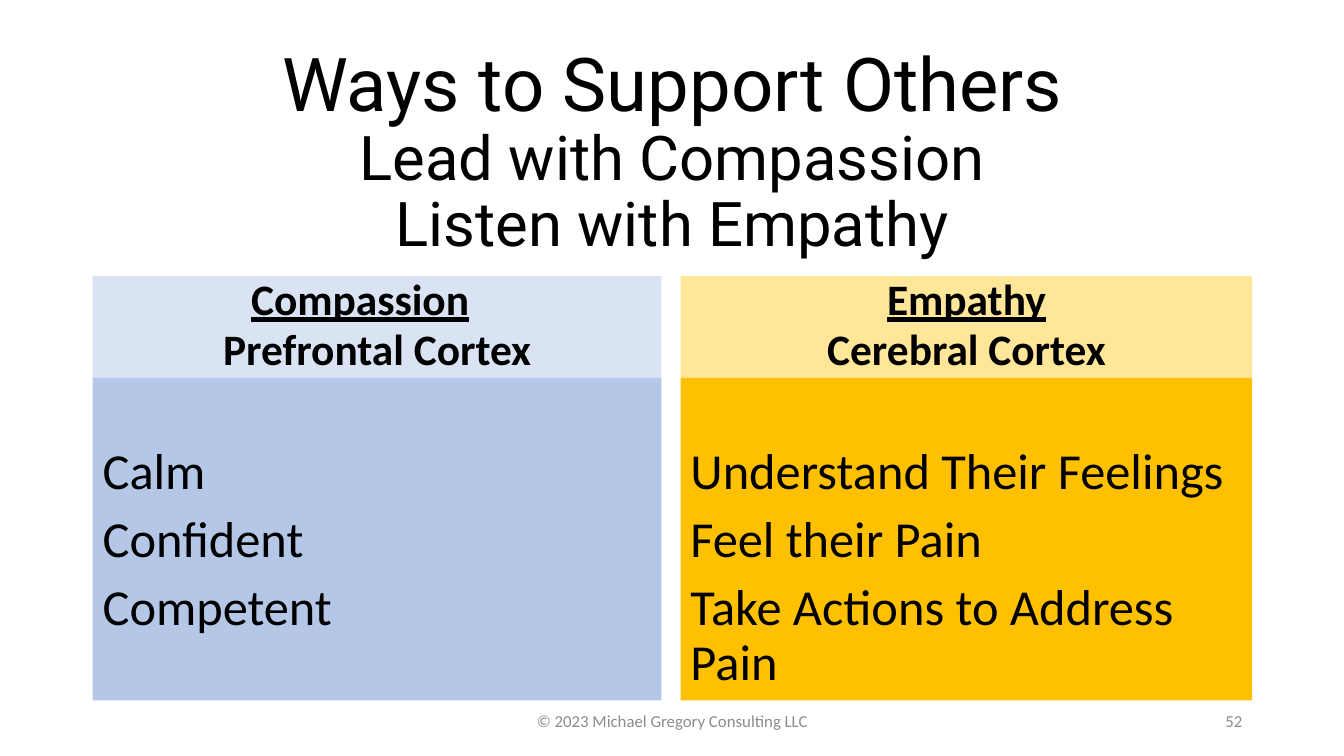
from dataclasses import dataclass

from pptx import Presentation
from pptx import util as u
from pptx.dml import color
from pptx.enum import shapes, text


@dataclass(frozen=True)
class Theme:
    """Colours, fonts and type sizes of the slide."""
    white: str = "FFFFFF"
    black: str = "000000"
    grey: str = "8C8C8C"
    pale_blue: str = "DAE3F3"
    blue: str = "B4C7E7"
    pale_gold: str = "FFE699"
    gold: str = "FFC000"
    title_font: str = "Roboto"
    body_font: str = "Calibri"
    title: int = 53
    subtitle: int = 44
    heading: int = 31
    body: int = 36
    footer: int = 12


T = Theme()
ALIGN = text.PP_ALIGN
ANCHOR = text.MSO_ANCHOR


def add_run(p, words, size, font=T.body_font, colour=T.black, bold=False, underline=False):
    """Append one formatted run to a paragraph."""
    r = p.add_run()
    r.text = words
    r.font.name = font
    r.font.size = u.Pt(size)
    r.font.bold = bold
    r.font.underline = underline
    r.font.color.rgb = color.RGBColor.from_string(colour)


def set_frame(sp, anchor, top=0.05):
    """Set wrapping, anchor and insets, and return the text frame."""
    tf = sp.text_frame
    tf.word_wrap = True
    tf.auto_size = text.MSO_AUTO_SIZE.NONE
    tf.vertical_anchor = anchor
    tf.margin_left = tf.margin_right = u.Inches(0.1)
    tf.margin_top, tf.margin_bottom = u.Inches(top), u.Inches(0.05)
    return tf


def add_paragraphs(tf, count, align, spacing):
    """Yield evenly spaced paragraphs of a text frame."""
    for i in range(count):
        p = tf.add_paragraph() if i else tf.paragraphs[0]
        p.alignment = align
        p.line_spacing = spacing
        p.space_before = u.Pt(10 if i else 0)
        yield p


def add_panel(s, x, y, w, h, fill):
    """Add a plain filled rectangle."""
    sp = s.shapes.add_shape(shapes.MSO_SHAPE.RECTANGLE, *map(u.Inches, (x, y, w, h)))
    sp.shadow.inherit = False
    sp.fill.solid()
    sp.fill.fore_color.rgb = color.RGBColor.from_string(fill)
    sp.line.fill.background()
    return sp


def add_title(s, x, y, w, h, lines):
    """Place the title placeholder with one large line and smaller ones below."""
    sp = s.shapes.title
    sp.left, sp.top, sp.width, sp.height = map(u.Inches, (x, y, w, h))
    sp.fill.solid()
    sp.fill.fore_color.rgb = color.RGBColor.from_string(T.white)
    p, = add_paragraphs(set_frame(sp, ANCHOR.MIDDLE), 1, ALIGN.CENTER, 0.9)
    for i, line in enumerate(lines):
        if i:
            p.add_line_break()
        add_run(p, line, T.subtitle if i else T.title, T.title_font)


def add_column(s, x, y, w, h, heading, points, fills):
    """Add a two-line heading panel above a panel of points."""
    head_h = 1.01
    head = set_frame(add_panel(s, x, y, w, head_h, fills[0]), ANCHOR.BOTTOM)
    for i, p in enumerate(add_paragraphs(head, len(heading), ALIGN.CENTER, 0.7)):
        add_run(p, heading[i], T.heading, bold=True, underline=i == 0)
    body = add_panel(s, x, y + head_h, w, h - head_h, fills[1])
    tf = set_frame(body, ANCHOR.TOP, top=0.67)
    for p, point in zip(add_paragraphs(tf, len(points), ALIGN.LEFT, 0.9), points):
        add_run(p, point, T.body)


def add_footer(s, x, y, w, h, words, align):
    """Add one small grey footer text."""
    sp = s.shapes.add_textbox(*map(u.Inches, (x, y, w, h)))
    p, = add_paragraphs(set_frame(sp, ANCHOR.MIDDLE), 1, align, 1.0)
    add_run(p, words, T.footer, colour=T.grey)


def main():
    """Build and save the slide."""
    prs = Presentation()
    prs.slide_width, prs.slide_height = u.Inches(13.33), u.Inches(7.5)
    s = prs.slides.add_slide(prs.slide_layouts[5])
    add_title(s, 0.92, 0.4, 11.5, 2.25,
              ["Ways to Support Others", "Lead with Compassion", "Listen with Empathy"])
    add_column(s, 0.92, 2.74, 5.64, 4.21, ["Compassion\t", "Prefrontal Cortex"],
               ["Calm", "Confident", "Competent"], (T.pale_blue, T.blue))
    add_column(s, 6.75, 2.74, 5.67, 4.21, ["Empathy", "Cerebral Cortex"],
               ["Understand Their Feelings", "Feel their Pain", "Take Actions to Address Pain"],
               (T.pale_gold, T.gold))
    add_footer(s, 4.42, 6.95, 4.5, 0.4, "© 2023 Michael Gregory Consulting LLC", ALIGN.CENTER)
    add_footer(s, 9.42, 6.95, 3, 0.4, "52", ALIGN.RIGHT)
    prs.save("out.pptx")


if __name__ == "__main__":
    main()
